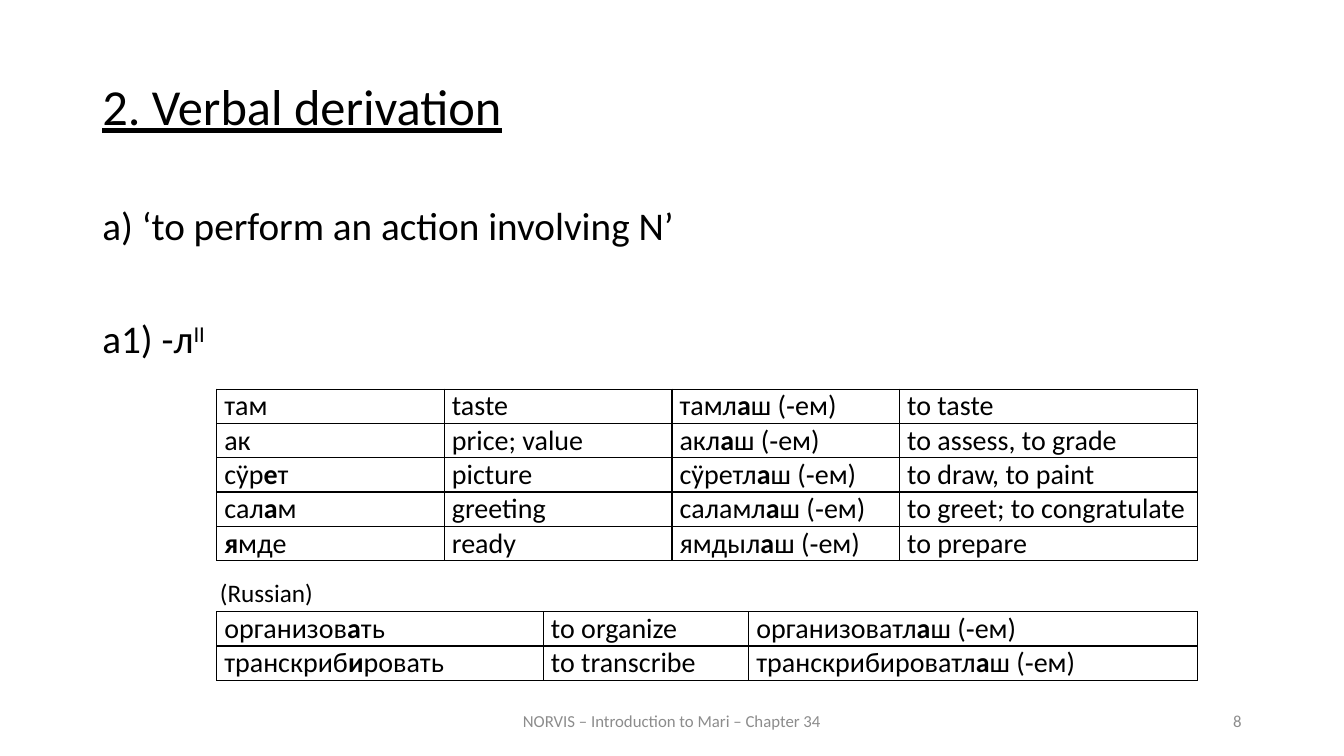
from dataclasses import dataclass

from lxml import etree
from pptx import Presentation
from pptx import util as u
from pptx.dml.color import RGBColor
from pptx.enum import text as t
from pptx.oxml import ns

BLACK = RGBColor(0, 0, 0)
GREY = RGBColor(0x8C, 0x8C, 0x8C)
FONT = "Calibri"
LEFT, CENTER = t.PP_ALIGN.LEFT, t.PP_ALIGN.CENTER
RIGHT, JUSTIFY = t.PP_ALIGN.RIGHT, t.PP_ALIGN.JUSTIFY
ROW = 24.5


@dataclass(frozen=True)
class Line:
    """One paragraph; *x* is bold, ^x^ is raised."""
    words: str
    size: float
    color: RGBColor = BLACK
    align: t.PP_ALIGN = LEFT
    under: bool = False
    before: float = 0
    space: float = 1.0


@dataclass(frozen=True)
class Box:
    x: float
    y: float
    w: float
    h: float
    lines: tuple[Line, ...]
    middle: bool = False
    wrap: bool = True


@dataclass(frozen=True)
class Grid:
    x: float
    y: float
    cols: tuple[float, ...]
    rows: tuple[tuple[str, ...], ...]


BOXES = (
    # Heading
    Box(66, 54.7, 828, 60, (
        Line("2. Verbal derivation", 36, align=JUSTIFY, under=True,
             before=12, space=0.9),)),
    # Footer and page number
    Box(318, 500.5, 324, 28.8, (
        Line("NORVIS – Introduction to Mari – Chapter 34", 12, GREY, CENTER),),
        middle=True),
    Box(678, 500.5, 216, 28.8, (Line("8", 12, GREY, RIGHT),), middle=True),
    # Outline
    Box(66, 144, 828, 342.7, (
        Line("a) ‘to perform an action involving N’", 28, before=10, space=0.9),
        Line("a1) -л^II^", 28, before=50.8, space=0.9))),
    # Label of the loanwords
    Box(150, 408.5, 102, 29, (Line("(Russian)", 18),), wrap=False),
)

GRIDS = (
    # Native stems
    Grid(154.8, 278, (162.6, 162.6, 162.6, 212.7), (
        ("там", "taste", "тамл*а*ш (‑ем)", "to taste"),
        ("ак", "price; value", "акл*а*ш (‑ем)", "to assess, to grade"),
        ("сӱр*е*т", "picture", "сӱретл*а*ш (‑ем)", "to draw, to paint"),
        ("сал*а*м", "greeting", "саламл*а*ш (‑ем)", "to greet; to congratulate"),
        ("*я*мде", "ready", "ямдыл*а*ш (‑ем)", "to prepare"))),
    # Russian stems
    Grid(154.8, 437, (233.4, 146.7, 320.4), (
        ("организов*а*ть", "to organize", "организоватл*а*ш (‑ем)"),
        ("транскриб*и*ровать", "to transcribe", "транскрибироватл*а*ш (‑ем)"))),
)


def write(frame, lines: tuple[Line, ...]) -> None:
    for i, line in enumerate(lines):
        para = frame.add_paragraph() if i else frame.paragraphs[0]
        para.alignment = line.align
        para.line_spacing = line.space
        para.space_before = u.Pt(line.before)
        mark = "^" if "^" in line.words else "*"
        for j, part in enumerate(line.words.split(mark)):
            if not part:
                continue
            run = para.add_run()
            run.text = part
            font = run.font
            font.name, font.size = FONT, u.Pt(line.size)
            font.color.rgb = line.color
            font.underline = line.under
            marked = j % 2 == 1
            font.bold = marked and mark == "*"
            if marked and mark == "^":
                font._element.set("baseline", "30000")


def draw_box(slide, box: Box) -> None:
    shape = slide.shapes.add_textbox(*map(u.Pt, (box.x, box.y, box.w, box.h)))
    frame = shape.text_frame
    frame.word_wrap = box.wrap
    frame.vertical_anchor = (t.MSO_ANCHOR.MIDDLE if box.middle
                             else t.MSO_ANCHOR.TOP)
    write(frame, box.lines)


def border(cell) -> None:
    props = cell._tc.get_or_add_tcPr()
    for side in ("lnL", "lnR", "lnT", "lnB"):
        edge = etree.SubElement(props, ns.qn(f"a:{side}"), w=str(u.Pt(1)))
        fill = etree.SubElement(edge, ns.qn("a:solidFill"))
        etree.SubElement(fill, ns.qn("a:srgbClr"), val=str(BLACK))


def draw_grid(slide, grid: Grid) -> None:
    count = len(grid.rows)
    area = (grid.x, grid.y, sum(grid.cols), ROW * count)
    table = slide.shapes.add_table(
        count, len(grid.cols), *map(u.Pt, area)).table
    table.first_row = table.horz_banding = False
    for col, width in zip(table.columns, grid.cols):
        col.width = u.Pt(width)
    for row, cells in zip(table.rows, grid.rows):
        row.height = u.Pt(ROW)
        for cell, words in zip(row.cells, cells):
            cell.margin_left = cell.margin_right = u.Pt(5.4)
            cell.margin_top = cell.margin_bottom = u.Pt(0)
            border(cell)
            cell.fill.background()
            write(cell.text_frame, (Line(words, 20, align=JUSTIFY),))


def main() -> None:
    deck = Presentation()
    deck.slide_width, deck.slide_height = u.Pt(960), u.Pt(540)
    slide = deck.slides.add_slide(deck.slide_layouts[6])
    for box in BOXES:
        draw_box(slide, box)
    for grid in GRIDS:
        draw_grid(slide, grid)
    deck.save("out.pptx")


if __name__ == "__main__":
    main()
